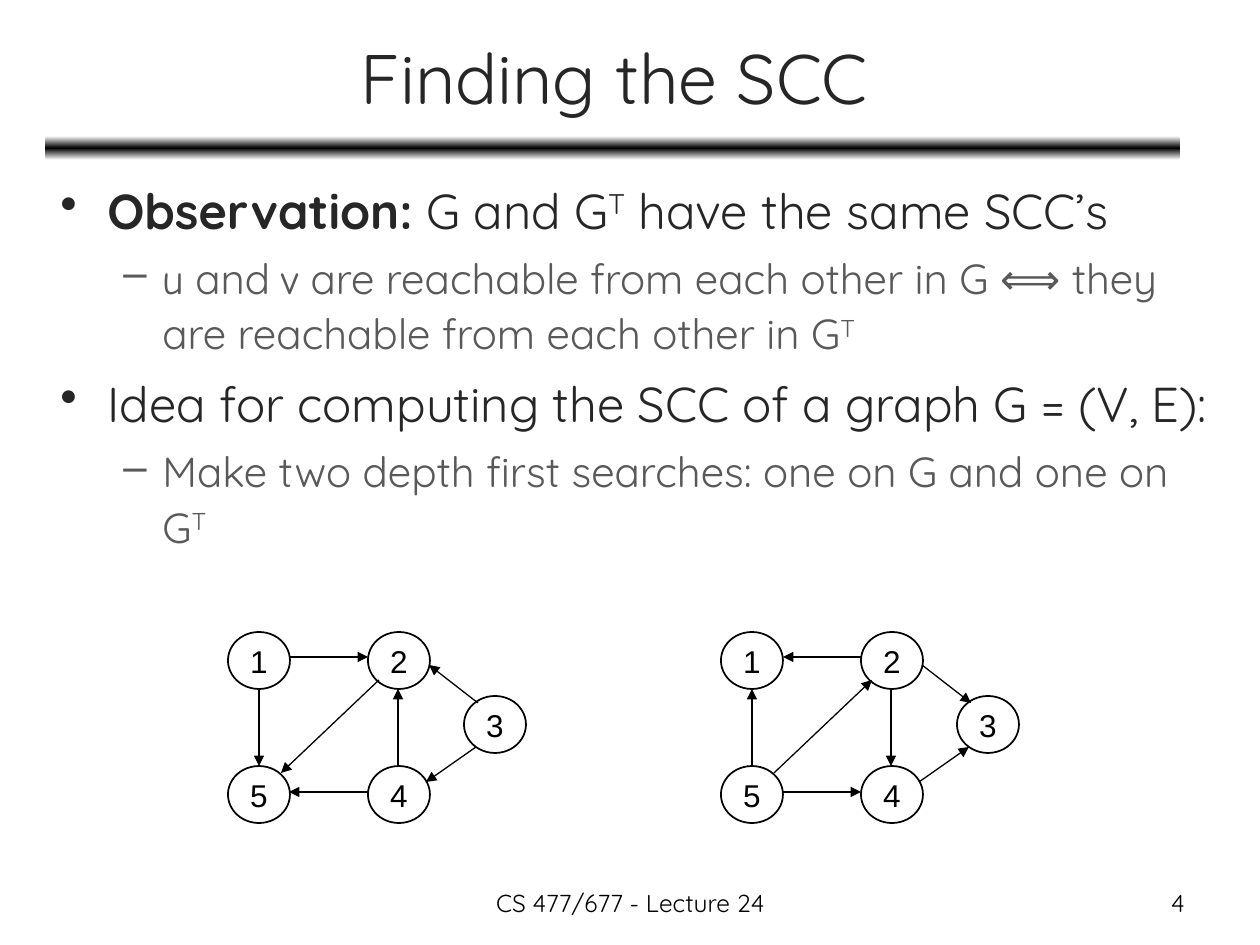
from lxml import etree
from pptx import Presentation, util as u
from pptx.dml.color import RGBColor
from pptx.enum import shapes, text
from pptx.oxml import ns

TITLE = "Finding the SCC"
FOOTER = "CS 477/677 - Lecture 24"
PAGE_NUMBER = "4"

POINTS = [
    (0, [("Observation: ", "bold"), ("G and G", ""), ("T", "super"), (" have the same SCC’s", "")]),
    (1, [("u", "variable"), (" and ", ""), ("v", "variable"),
         (" are reachable from each other in G ⟺ they are reachable from each other in G", ""),
         ("T", "super")]),
    (0, [("Idea for computing the SCC of a graph G = (V, E):", "")]),
    (1, [("Make two depth first searches: one on G and one on G", ""), ("T", "super")]),
]
LEVELS = [
    {"bullet": "•", "size": 28, "color": "262626", "left": 47, "hang": 47},
    {"bullet": "–", "size": 24, "color": "595959", "left": 102, "hang": 39},
]

NODES = {"1": (0, 0), "2": (140, 0), "3": (236, 64), "4": (140, 134), "5": (0, 134)}
NODE_SIZE = (62, 57)
EDGES = [
    ((62, 25), (140, 25)),
    ((170, 134), (170, 57)),
    ((31, 57), (31, 134)),
    ((151, 48), (53, 141)),
    ((140, 160), (61, 160)),
    ((250, 71), (201, 33)),
    ((248, 115), (198, 150)),
]
TRANSPOSED_EDGES = [(end, start) for start, end in EDGES]
GRAPHS = [((228, 632), EDGES), ((721, 632), TRANSPOSED_EDGES)]


def px(*lengths):
    return [u.Emu(round(length * 914400 / 126)) for length in lengths]


def color(value):
    return RGBColor.from_string(value)


def set_font(para, size, value, name="Quicksand"):
    para.font.size = u.Pt(size)
    para.font.name = name
    para.font.color.rgb = color(value)


def place_title(slide):
    title = slide.shapes.title
    title.left, title.top, title.width, title.height = px(47, 14, 1134, 125)
    title.text_frame.text = TITLE
    title.text_frame.vertical_anchor = text.MSO_ANCHOR.MIDDLE
    para = title.text_frame.paragraphs[0]
    para.alignment = text.PP_ALIGN.CENTER
    set_font(para, 40, "262626")


def add_rule(slide):
    rule = slide.shapes.add_shape(shapes.MSO_SHAPE.ROUNDED_RECTANGLE, *px(45, 136, 1135, 24))
    rule.shadow.inherit = False
    rule.line.fill.background()
    rule.fill.gradient()
    rule.fill.gradient_angle = 90
    stops = rule.fill._fill._gradFill.gsLst
    for stop in list(stops):
        stops.remove(stop)
    for position, value in [(0, "FFFFFF"), (50, "000000"), (100, "FFFFFF")]:
        stop = etree.SubElement(stops, ns.qn("a:gs"), pos=str(position * 1000))
        etree.SubElement(stop, ns.qn("a:srgbClr"), val=value)


def add_box(slide, place):
    box = slide.shapes.add_textbox(*px(*place))
    box.text_frame.word_wrap = True
    return box.text_frame


def add_label(slide, place, words, alignment):
    para = add_box(slide, place).paragraphs[0]
    para.text = words
    para.alignment = alignment
    set_font(para, 14, "000000")


def add_points(slide):
    frame = add_box(slide, (48, 168, 1187, 364))
    for index, (level, spans) in enumerate(POINTS):
        para = frame.add_paragraph() if index else frame.paragraphs[0]
        style = LEVELS[level]
        para.level = level
        left, hang = px(style["left"], style["hang"])
        properties = para._p.get_or_add_pPr()
        properties.set("marL", str(left))
        properties.set("indent", str(-hang))
        etree.SubElement(properties, ns.qn("a:buChar"), char=style["bullet"])
        para.line_spacing = 1.1
        para.space_before = u.Pt(style["size"] * 0.2)
        set_font(para, style["size"], style["color"])
        for words, kind in spans:
            span = para.add_run()
            span.text = words
            if kind == "bold":
                span.font.bold = True
            elif kind == "variable":
                span.font.name = "Comic Neue"
            elif kind == "super":
                span._r.get_or_add_rPr().set("baseline", "30000")


def add_node(graph, label, left, top):
    node = graph.shapes.add_shape(shapes.MSO_SHAPE.OVAL, *px(left, top, *NODE_SIZE))
    node.shadow.inherit = False
    node.fill.background()
    node.line.color.rgb = color("000000")
    node.line.width = u.Pt(1)
    frame = node.text_frame
    frame.word_wrap = False
    frame.vertical_anchor = text.MSO_ANCHOR.MIDDLE
    para = frame.paragraphs[0]
    para.text = label
    para.alignment = text.PP_ALIGN.CENTER
    set_font(para, 18, "000000", "Arial")


def add_edge(graph, start, end):
    edge = graph.shapes.add_connector(shapes.MSO_CONNECTOR.STRAIGHT, *px(*start, *end))
    edge.line.color.rgb = color("000000")
    edge.line.width = u.Pt(0.75)
    etree.SubElement(edge.line._get_or_add_ln(), ns.qn("a:tailEnd"), type="triangle")
    etree.SubElement(edge._element.spPr, ns.qn("a:effectLst"))


def add_graph(slide, origin, edges):
    graph = slide.shapes.add_group_shape()

    def shift(point):
        return origin[0] + point[0], origin[1] + point[1]

    for label, corner in NODES.items():
        add_node(graph, label, *shift(corner))
    for start, end in edges:
        add_edge(graph, shift(start), shift(end))


def main():
    deck = Presentation()
    deck.slide_width, deck.slide_height = px(1260, 945)
    slide = deck.slides.add_slide(deck.slide_layouts[5])
    add_rule(slide)
    place_title(slide)
    add_points(slide)
    for origin, edges in GRAPHS:
        add_graph(slide, origin, edges)
    add_label(slide, (431, 882, 399, 44), FOOTER, text.PP_ALIGN.CENTER)
    add_label(slide, (903, 882, 294, 44), PAGE_NUMBER, text.PP_ALIGN.RIGHT)
    deck.save("out.pptx")


if __name__ == "__main__":
    main()
